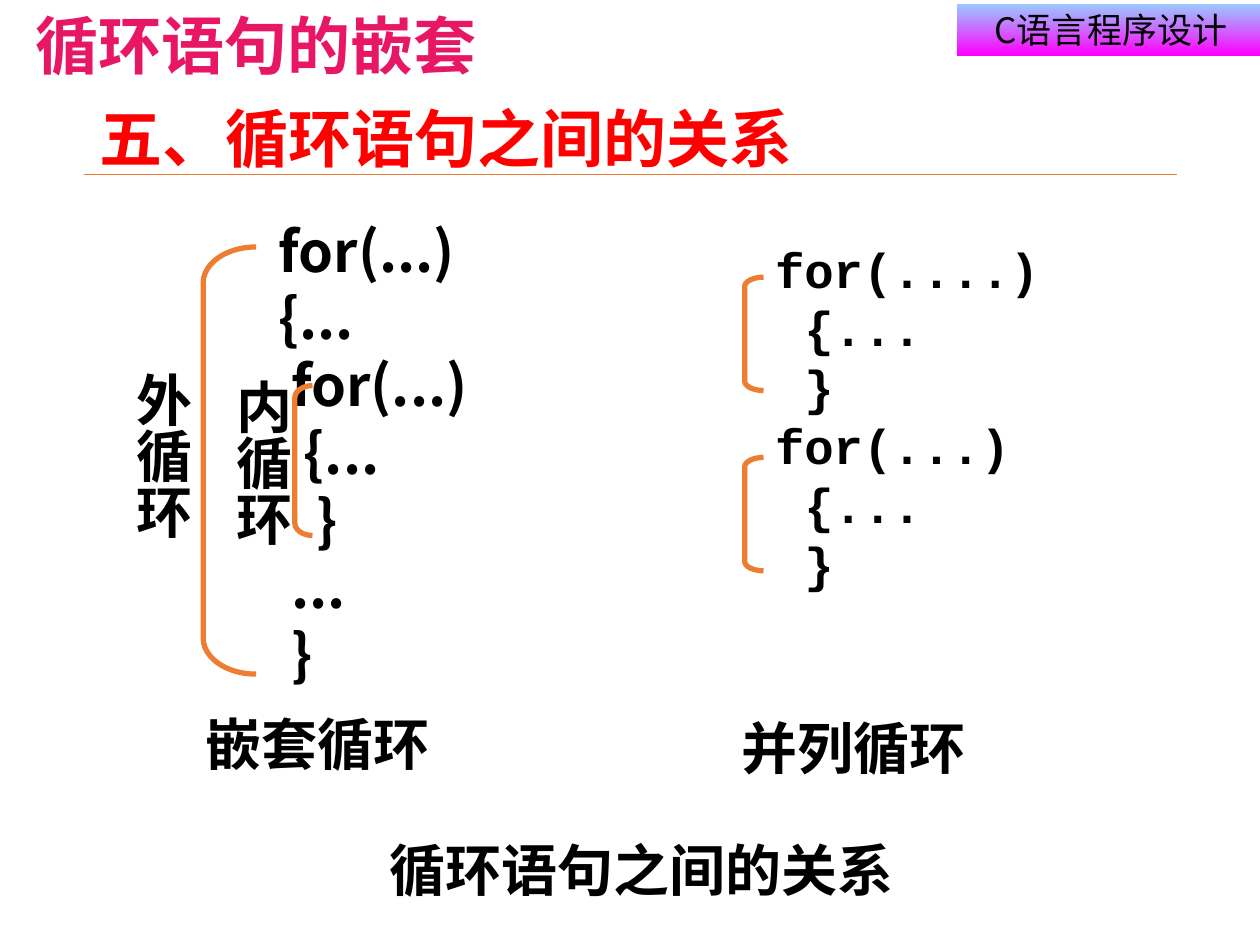
from pptx import Presentation
from pptx.util import Pt
from pptx.dml.color import RGBColor
from pptx.enum.shapes import MSO_SHAPE, MSO_CONNECTOR
from pptx.enum.text import PP_ALIGN, MSO_ANCHOR, MSO_AUTO_SIZE
from pptx.oxml.ns import qn
from lxml.etree import SubElement

HAN = "Noto Sans CJK SC"


def tint(code):
    return RGBColor.from_string(code)


def style(frame, size, font, color="000000", bold=True, align=PP_ALIGN.JUSTIFY, lead=None):
    for par in frame.paragraphs:
        par.alignment = align
        if lead:
            par.line_spacing = lead
        for run in par.runs:
            run.font.size = Pt(size)
            run.font.bold = bold
            run.font.name = font
            run.font.color.rgb = tint(color)
            east = SubElement(run.font._element, qn("a:ea"))
            east.set("typeface", HAN)


deck = Presentation()
deck.slide_width, deck.slide_height = Pt(720), Pt(540)
slide = deck.slides.add_slide(deck.slide_layouts[5])
shapes = slide.shapes

# Section title
title = shapes.title
title.left, title.top, title.width, title.height = Pt(49.7), Pt(28.8), Pt(620.6), Pt(104.4)
frame = title.text_frame
frame.text = "五、循环语句之间的关系"
frame.auto_size = MSO_AUTO_SIZE.NONE
frame.vertical_anchor = MSO_ANCHOR.MIDDLE
style(frame, 36, "Calibri", "FF0000", align=PP_ALIGN.LEFT, lead=0.9)

# Course banner
banner = shapes.add_shape(MSO_SHAPE.RECTANGLE, Pt(547), Pt(2.2), Pt(175.7), Pt(29.5))
banner.shadow.inherit = False
banner.line.fill.background()
banner.fill.gradient()
banner.fill.gradient_angle = 270
for stop, place, code in zip(banner.fill.gradient_stops, (0, 1), ("99CCFF", "FF00FF")):
    stop.position = place
    stop.color.rgb = tint(code)
frame = banner.text_frame
frame.text = "C语言程序设计"
frame.vertical_anchor = MSO_ANCHOR.MIDDLE
style(frame, 20, HAN, bold=False, align=PP_ALIGN.CENTER)

# Chapter heading, with the full box width for one line
head = shapes.add_textbox(Pt(14.4), Pt(0), Pt(263.5), Pt(29.5))
frame = head.text_frame
frame.word_wrap = False
frame.margin_left = frame.margin_right = Pt(0)
frame.text = "循环语句的嵌套"
style(frame, 36, "Noto Sans CJK JP", "E81766", align=PP_ALIGN.CENTER)

# Rule under the title
rule = shapes.add_connector(MSO_CONNECTOR.STRAIGHT, Pt(48.2), Pt(99.8), Pt(672.3), Pt(99.8))
rule.line.color.rgb = tint("ED7D31")
rule.line.width = Pt(0.25)
SubElement(rule._element.spPr, qn("a:effectLst"))

# Code samples and captions
nested = "for(...)\n{...\n for(...)\n  {...\n   }\n ...\n }"
serial = "for(....)\n {...\n }\nfor(...)\n {...\n }"
serif = "Times New Roman"
for text, x, y, w, h, size, font, align in (
    ("循环语句之间的关系", 172.8, 473.8, 388, 41.8, 32, serif, PP_ALIGN.CENTER),
    (serial, 435.8, 133.2, 173.5, 256.3, 28, "Courier New", PP_ALIGN.JUSTIFY),
    ("并列循环", 416.9, 403.9, 195, 42.5, 32, serif, PP_ALIGN.JUSTIFY),
    (nested, 152, 120.2, 173.5, 256.3, 32, HAN, PP_ALIGN.JUSTIFY),
    ("嵌套循环", 110.2, 401.8, 180.7, 42.5, 32, serif, PP_ALIGN.JUSTIFY),
):
    box = shapes.add_textbox(Pt(x), Pt(y), Pt(w), Pt(h))
    frame = box.text_frame
    frame.word_wrap = True
    frame.text = text
    style(frame, size, font, align=align, lead=Pt(1.2 * size))

# Loop brackets
for x, y, w, h, bend in (
    (425.5, 158.4, 10.8, 64.8, 0.5),
    (425.5, 261.4, 10.8, 64.8, 0.5),
    (116.1, 141.1, 30.2, 244.1, 0.68),
    (168.5, 220.3, 10.1, 85.7, 0.7),
):
    mark = shapes.add_shape(MSO_SHAPE.LEFT_BRACKET, Pt(x), Pt(y), Pt(w), Pt(h))
    mark.adjustments[0] = bend
    mark.shadow.inherit = False
    mark.fill.background()
    mark.line.color.rgb = tint("ED7D31")
    mark.line.width = Pt(3)

# Vertical loop labels
for text, x, y in (("内循环", 121.7, 209.5), ("外循环", 64.8, 205.9)):
    box = shapes.add_textbox(Pt(x), Pt(y), Pt(51.1), Pt(128.2))
    frame = box.text_frame
    frame.word_wrap = True
    frame.margin_top, frame.margin_right = Pt(7), Pt(3.6)
    frame._txBody.bodyPr.set("vert", "eaVert")
    frame.text = text
    style(frame, 32, serif, lead=Pt(38.4))

deck.save("out.pptx")
